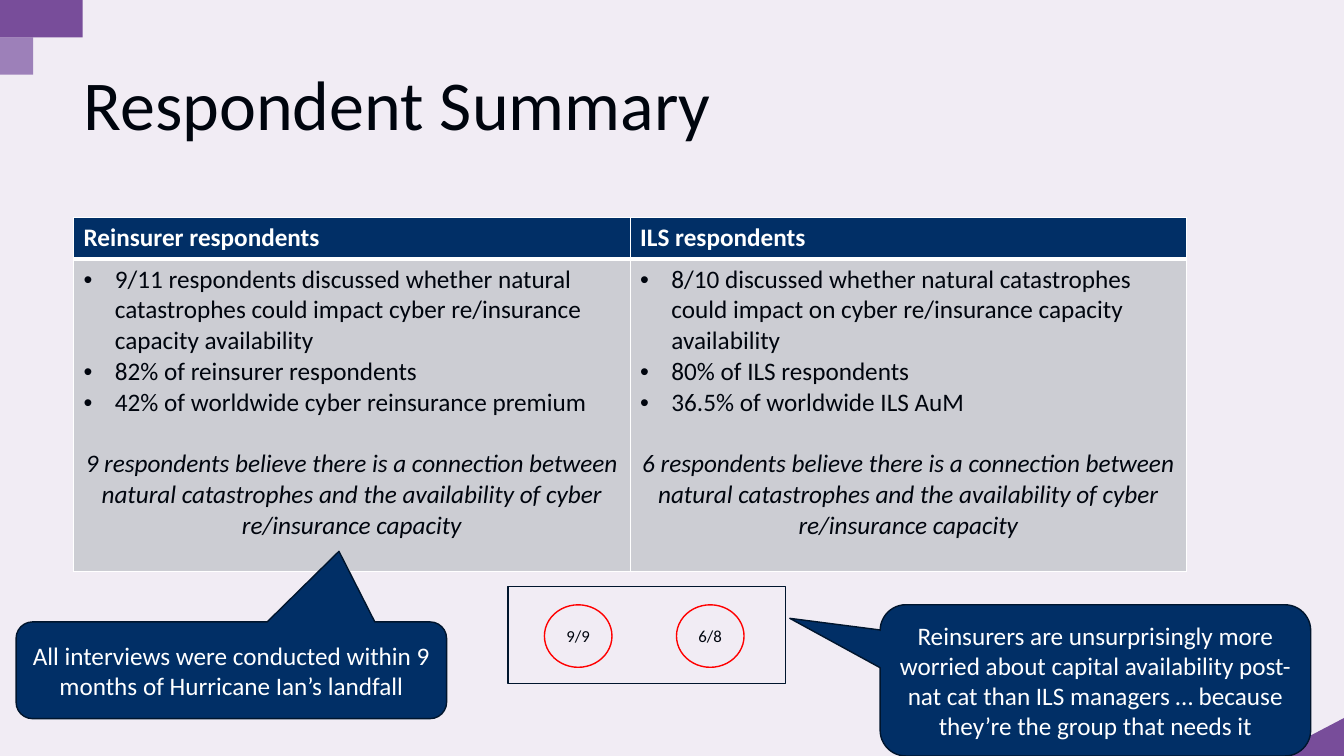
from dataclasses import dataclass
from typing import Any

from lxml import etree
from pptx import Presentation
from pptx import util as u
from pptx.dml import color as dc
from pptx.enum import shapes, text
from pptx.oxml import ns

PURPLE, LILAC = "784D9A", "9D80B9"
NAVY, EDGE, INK = "012F66", "00152D", "00050E"
WHITE, GREY, RED = "FFFFFF", "CCCDD3", "FF0000"
KIND = shapes.MSO_SHAPE
CENTER = text.PP_ALIGN.CENTER


@dataclass
class Item:
    kind: Any
    box: tuple[float, float, float, float]
    fill: str = ""
    line: str = ""
    words: str = ""
    size: int = 18
    ink: str = WHITE
    adj: tuple[float, ...] = ()


@dataclass
class Column:
    head: str
    points: list[str]
    belief: str


def rgb(code: str) -> dc.RGBColor:
    return dc.RGBColor.from_string(code)


def put(target: Any, values: dict[str, Any]) -> None:
    for name, value in values.items():
        setattr(target, name, value)


def child(parent: Any, tag: str, **attrs: str) -> Any:
    return etree.SubElement(parent, ns.qn(tag), attrs)


def write(para: Any, words: str, size: int, ink: str, **form: Any) -> None:
    run = para.add_run()
    run.text = words
    put(run.font, {"name": "Calibri", "size": u.Pt(size), **form})
    run.font.color.rgb = rgb(ink)


def draw(slide: Any, item: Item) -> Any:
    shape = slide.shapes.add_shape(item.kind, *map(u.Inches, item.box))
    shape.shadow.inherit = False
    for spot, value in enumerate(item.adj):
        shape.adjustments[spot] = value
    if item.fill:
        shape.fill.solid()
        shape.fill.fore_color.rgb = rgb(item.fill)
    else:
        shape.fill.background()
    if item.line:
        shape.line.color.rgb = rgb(item.line)
        shape.line.width = u.Pt(1)
    else:
        shape.line.fill.background()
    if item.words:
        put(shape.text_frame, {"word_wrap": True,
                               "vertical_anchor": text.MSO_ANCHOR.MIDDLE})
        para = shape.text_frame.paragraphs[0]
        para.alignment = CENTER
        write(para, item.words, item.size, item.ink)
    return shape


def style(cell: Any, fill: str, top: int, bottom: int) -> None:
    props = cell._tc.get_or_add_tcPr()
    for side, width in {"L": 1, "R": 1, "T": top, "B": bottom}.items():
        edge = child(props, f"a:ln{side}", w=str(u.Pt(width)))
        child(child(edge, "a:solidFill"), "a:srgbClr", val=WHITE)
    cell.fill.solid()
    cell.fill.fore_color.rgb = rgb(fill)


def bullet(para: Any) -> None:
    props = para._p.get_or_add_pPr()
    indent = u.Inches(0.31)
    props.set("marL", str(indent))
    props.set("indent", str(-indent))
    child(props, "a:buFont", typeface="Arial")
    child(props, "a:buChar", char="•")


def fill_table(slide: Any, columns: list[Column]) -> None:
    box = map(u.Inches, (0.73, 2.16, 11.04, 3.51))
    table = slide.shapes.add_table(2, len(columns), *box).table
    for row, height in zip(table.rows, (0.41, 3.1)):
        row.height = u.Inches(height)
    for col, column in enumerate(columns):
        head, body = table.cell(0, col), table.cell(1, col)
        style(head, NAVY, 1, 3)
        style(body, GREY, 3, 1)
        write(head.text_frame.paragraphs[0], column.head, 18, WHITE, bold=True)
        frame = body.text_frame
        for spot, point in enumerate(column.points):
            para = frame.add_paragraph() if spot else frame.paragraphs[0]
            bullet(para)
            write(para, point, 18, INK, bold=False)
        para = frame.add_paragraph()
        put(para, {"alignment": CENTER, "space_before": u.Pt(22)})
        write(para, column.belief, 18, INK, bold=False, italic=True)


def add_title(slide: Any, words: str) -> None:
    box = slide.shapes.add_textbox(*map(u.Inches, (0.73, 0.65, 8, 0.71)))
    put(box.text_frame, {"word_wrap": True,
                         "vertical_anchor": text.MSO_ANCHOR.TOP})
    para = box.text_frame.paragraphs[0]
    para.line_spacing = 0.9
    write(para, words, 50, INK)


def belief(count: int) -> str:
    return (f"{count} respondents believe there is a connection between natural "
            "catastrophes and the availability of cyber re/insurance capacity")


COLUMNS = [
    Column("Reinsurer respondents",
           ["9/11 respondents discussed whether natural catastrophes could "
            "impact cyber re/insurance capacity availability",
            "82% of reinsurer respondents",
            "42% of worldwide cyber reinsurance premium"], belief(9)),
    Column("ILS respondents",
           ["8/10 discussed whether natural catastrophes could impact on "
            "cyber re/insurance capacity availability",
            "80% of ILS respondents",
            "36.5% of worldwide ILS AuM"], belief(6)),
]

CALLOUT = KIND.ROUNDED_RECTANGULAR_CALLOUT
NOTES = [
    Item(CALLOUT, (0.16, 6.17, 4.27, 0.96), NAVY, EDGE,
         "All interviews were conducted within 9 months of Hurricane Ian’s "
         "landfall", adj=(0.25, -1.23, 0.17)),
    *(Item(KIND.OVAL, (left, 6, 0.67, 0.62), "", RED, score, 12, INK)
      for left, score in ((5.4, "9/9"), (6.71, "6/8"))),
    Item(KIND.RECTANGLE, (5.04, 5.82, 2.75, 0.96), "", EDGE),
    Item(CALLOUT, (8.73, 6, 4.27, 1.5), NAVY, EDGE,
         "Reinsurers are unsurprisingly more worried about capital "
         "availability post-nat cat than ILS managers … because they’re the "
         "group that needs it", adj=(-0.71, -0.41, 0.17)),
]


def main() -> None:
    deck = Presentation()
    put(deck, {"slide_width": u.Inches(13.33), "slide_height": u.Inches(7.5)})
    slide = deck.slides.add_slide(deck.slide_layouts[6])

    # Pale wash and corner accents
    wash = draw(slide, Item(KIND.RECTANGLE, (0, -0.04, 13.35, 7.54), PURPLE))
    tint = wash._element.spPr.find(".//" + ns.qn("a:srgbClr"))
    child(tint, "a:alpha", val="10000")
    corner = draw(slide, Item(KIND.PARALLELOGRAM, (12.54, 7.09, 0.84, 0.85),
                              PURPLE, adj=(0.53,)))
    corner.rotation = 270
    corner._element.spPr.xfrm.set("flipV", "1")
    draw(slide, Item(KIND.RECTANGLE, (-0.01, 0.37, 0.34, 0.37), LILAC))
    draw(slide, Item(KIND.RECTANGLE, (-0.01, -0.01, 0.83, 0.38), PURPLE))

    # Table, title, then callouts and scores
    fill_table(slide, COLUMNS)
    add_title(slide, "Respondent Summary")
    for note in NOTES:
        draw(slide, note)

    deck.save("out.pptx")


if __name__ == "__main__":
    main()
